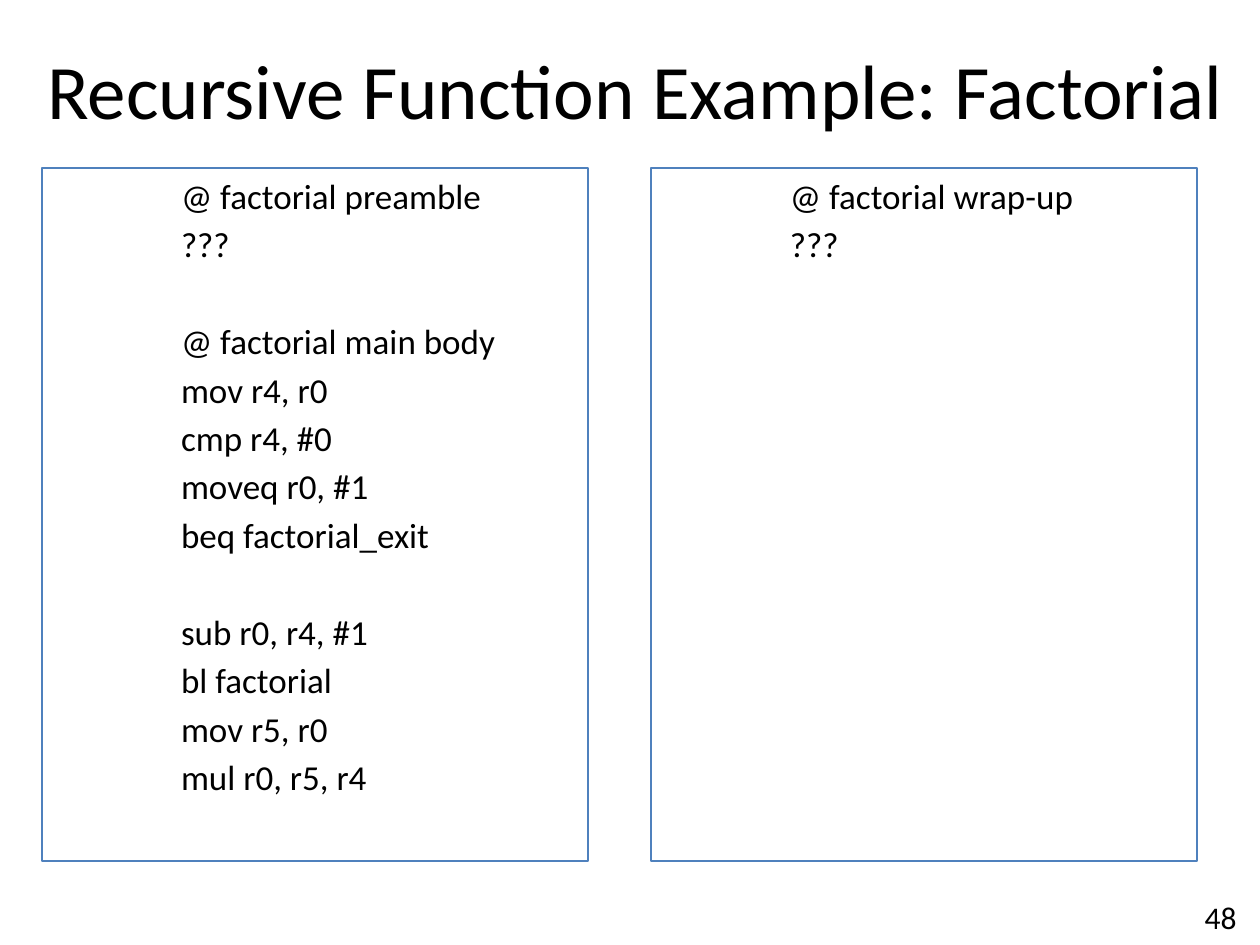
from pptx import Presentation
from pptx.dml.color import RGBColor
from pptx.enum.shapes import MSO_SHAPE
from pptx.enum.text import MSO_ANCHOR, PP_ALIGN
from pptx.util import Pt

EMU_PER_PX = 914400 / 126
BLACK = "000000"
PANEL_BLUE = "4F81BD"

# Code panels
PANEL_TOP, PANEL_WIDTH, PANEL_HEIGHT = 168, 546, 693
PANEL_LEFTS = (42, 651)
CODE_INDENT = 139
CODE_SPACE = 3.6  # points above each line
BLANK_LINE = 28   # points added above a new section

# Each panel is a list of sections, each section a list of lines
PREAMBLE_AND_BODY = [
    ["@ factorial preamble", "???"],
    ["@ factorial main body", "mov r4, r0", "cmp r4, #0", "moveq r0, #1",
     "beq factorial_exit"],
    ["sub r0, r4, #1", "bl factorial", "mov r5, r0", "mul r0, r5, r4"],
]
WRAP_UP = [["@ factorial wrap-up", "???"]]


def px(length):
    return int(length * EMU_PER_PX)


def color(value):
    return RGBColor.from_string(value)


def set_format(target, values):
    for name, value in values.items():
        setattr(target, name, value)


def write_line(paragraph, text, size, **paragraph_format):
    set_format(paragraph, paragraph_format)
    run = paragraph.add_run()
    run.text = text
    set_format(run.font, {"name": "Calibri", "size": Pt(size)})
    run.font.color.rgb = color(BLACK)


def add_label(slide, box, text, size, alignment, anchor):
    label = slide.shapes.add_textbox(*map(px, box)).text_frame
    set_format(label, {"word_wrap": True, "vertical_anchor": anchor})
    write_line(label.paragraphs[0], text, size, alignment=alignment)


def add_code_panel(slide, left, sections):
    box = (left, PANEL_TOP, PANEL_WIDTH, PANEL_HEIGHT)
    panel = slide.shapes.add_shape(MSO_SHAPE.RECTANGLE, *map(px, box))
    panel.shadow.inherit = False
    panel.fill.background()
    panel.line.color.rgb = color(PANEL_BLUE)
    panel.line.width = Pt(0.75)

    code = panel.text_frame
    set_format(code, {"word_wrap": True, "vertical_anchor": MSO_ANCHOR.TOP,
                      "margin_left": px(CODE_INDENT)})
    paragraph = code.paragraphs[0]
    for section_index, section in enumerate(sections):
        for line_index, line in enumerate(section):
            space = CODE_SPACE
            if section_index and not line_index:
                space += BLANK_LINE
            if section_index or line_index:
                paragraph = code.add_paragraph()
            write_line(paragraph, line, 20, alignment=PP_ALIGN.LEFT,
                       space_before=Pt(space))


def main():
    deck = Presentation()
    set_format(deck, {"slide_width": px(1260), "slide_height": px(945)})
    slide = deck.slides.add_slide(deck.slide_layouts[6])

    # Title
    add_label(slide, (32, 10, 1207, 158),
              "Recursive Function Example: Factorial", 44,
              PP_ALIGN.CENTER, MSO_ANCHOR.MIDDLE)

    # Code, side by side
    for left, sections in zip(PANEL_LEFTS, (PREAMBLE_AND_BODY, WRAP_UP)):
        add_code_panel(slide, left, sections)

    # Page number
    add_label(slide, (955, 892, 294, 50), "48", 18,
              PP_ALIGN.RIGHT, MSO_ANCHOR.TOP)

    deck.save("out.pptx")


if __name__ == "__main__":
    main()
